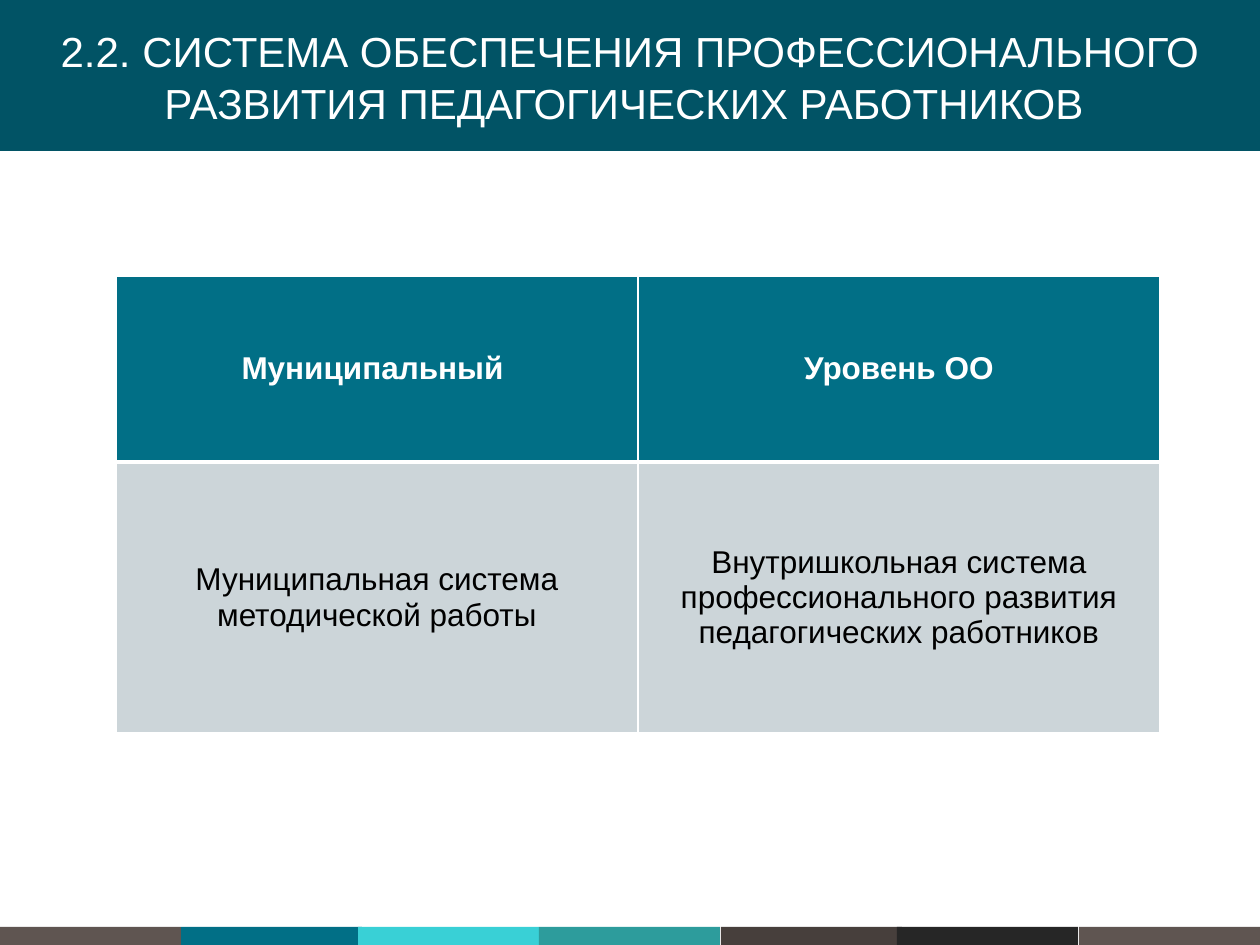
from lxml.etree import SubElement
from pptx import Presentation
from pptx.dml.color import RGBColor
from pptx.enum.shapes import MSO_SHAPE
from pptx.enum.text import MSO_ANCHOR, MSO_AUTO_SIZE, PP_ALIGN
from pptx.oxml.ns import qn
from pptx.util import Pt

PX = 914400 // 126
SLIDE_WIDTH, SLIDE_HEIGHT = 1260, 945
TITLE_HEIGHT = 151

COLORS = {
    "white": "FFFFFF",
    "black": "000000",
    "banner": "015365",
    "teal": "016F86",
    "row": "CCD5D9",
    "taupe": "5F5551",
    "aqua": "39D0D6",
    "sea": "2D9C9C",
    "brown": "473F3C",
    "charcoal": "262626",
}

TITLE = "2.2. СИСТЕМА ОБЕСПЕЧЕНИЯ ПРОФЕССИОНАЛЬНОГО РАЗВИТИЯ ПЕДАГОГИЧЕСКИХ РАБОТНИКОВ "
LEVELS = [
    ["Муниципальный ", "Уровень ОО"],
    [
        "Муниципальная система методической работы",
        "Внутришкольная система профессионального развития педагогических работников",
    ],
]
ROW_STYLES = [
    {"height": 186, "fill": "teal", "color": "white", "bold": True, "bottom": 3},
    {"height": 271, "fill": "row", "color": "black", "bold": False, "bottom": 1},
]
STRIPES = [
    (0, "taupe"), (181, "teal"), (358, "aqua"), (539, "sea"),
    (721, "brown"), (897, "charcoal"), (1079, "taupe"),
]


def px(length):
    return length * PX


def rgb(name):
    return RGBColor.from_string(COLORS[name])


def apply_format(target, values):
    for name, value in values.items():
        setattr(target, name, value)


def paint(item, color):
    item.fill.solid()
    item.fill.fore_color.rgb = rgb(color)


def write_text(frame, text, size, color, bold=False, spacing=1.0):
    paragraph = frame.paragraphs[0]
    apply_format(paragraph, {"alignment": PP_ALIGN.CENTER, "line_spacing": spacing})
    run = paragraph.add_run()
    run.text = text
    apply_format(run.font, {"name": "Arial", "size": Pt(size), "bold": bold})
    run.font.color.rgb = rgb(color)


def add_stripes(slide):
    top, width, height = 927, 181, 18
    for left, color in STRIPES:
        stripe = slide.shapes.add_shape(
            MSO_SHAPE.RECTANGLE, px(left), px(top), px(width), px(height))
        stripe.shadow.inherit = False
        paint(stripe, color)
        stripe.line.fill.background()


def fill_title(slide):
    title = slide.shapes.title
    apply_format(title, {
        "left": 0, "top": 0, "width": px(SLIDE_WIDTH), "height": px(TITLE_HEIGHT)})
    paint(title, "banner")
    apply_format(title.text_frame, {
        "auto_size": MSO_AUTO_SIZE.NONE,
        "vertical_anchor": MSO_ANCHOR.MIDDLE,
        "word_wrap": True,
    })
    write_text(title.text_frame, TITLE, 24, "white", spacing=1.05)


def set_borders(cell, widths):
    """Draw white cell borders; widths maps L, R, T and B to points."""
    properties = cell._tc.get_or_add_tcPr()
    for side, width in widths.items():
        line = SubElement(properties, qn(f"a:ln{side}"), w=str(Pt(width)))
        fill = SubElement(line, qn("a:solidFill"))
        SubElement(fill, qn("a:srgbClr"), val=COLORS["white"])


def add_levels_table(slide):
    column_width = 522
    heights = [style["height"] for style in ROW_STYLES]
    table = slide.shapes.add_table(
        len(LEVELS), len(LEVELS[0]), px(116), px(276),
        px(column_width * len(LEVELS[0])), px(sum(heights))).table
    for column in table.columns:
        column.width = px(column_width)
    top_border = 1
    for row, texts, style in zip(table.rows, LEVELS, ROW_STYLES):
        row.height = px(style["height"])
        for cell, text in zip(row.cells, texts):
            set_borders(cell, {"L": 1, "R": 1, "T": top_border, "B": style["bottom"]})
            paint(cell, style["fill"])
            cell.vertical_anchor = MSO_ANCHOR.MIDDLE
            write_text(cell.text_frame, text, 18, style["color"], style["bold"])
        top_border = style["bottom"]


def main():
    deck = Presentation()
    apply_format(deck, {
        "slide_width": px(SLIDE_WIDTH), "slide_height": px(SLIDE_HEIGHT)})
    slide = deck.slides.add_slide(deck.slide_layouts.get_by_name("Title Only"))
    add_stripes(slide)
    fill_title(slide)
    add_levels_table(slide)
    deck.save("out.pptx")


if __name__ == "__main__":
    main()
